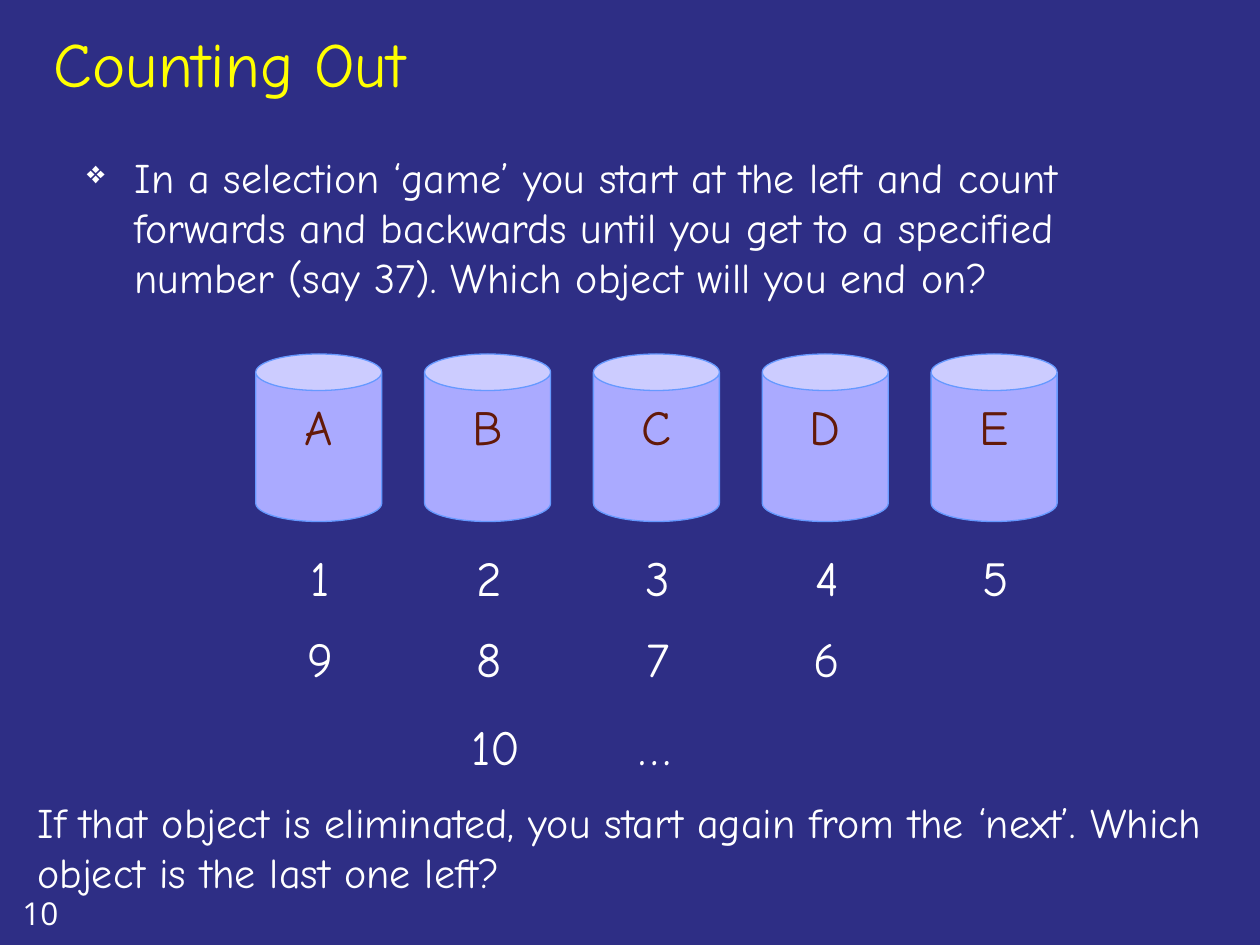
"""Build the Counting Out slide: five lettered cans with the counts below them."""
from typing import NamedTuple

from lxml import etree
from pptx import Presentation
from pptx import util as u
from pptx.dml import color
from pptx.enum import shapes, text
from pptx.oxml import ns

HAND = "Comic Neue"
WHITE = "FFFFFF"
COLUMN_STEP = 1.34
CAN_LEFT, CAN_TOP = 2.03, 2.81
COUNT_LEFT = 2.27


class Label(NamedTuple):
    words: str
    left: float
    top: float
    width: float
    height: float
    size: int = 28
    hue: str = WHITE
    font: str = HAND
    align: text.PP_ALIGN = text.PP_ALIGN.LEFT
    anchor: text.MSO_ANCHOR = text.MSO_ANCHOR.TOP


def rgb(value: str) -> color.RGBColor:
    return color.RGBColor.from_string(value)


def write(shape, label: Label):
    frame = shape.text_frame
    frame.word_wrap = True
    frame.vertical_anchor = label.anchor
    para = frame.paragraphs[0]
    para.text = label.words
    para.alignment = label.align
    para.font.size = u.Pt(label.size)
    para.font.name = label.font
    para.font.color.rgb = rgb(label.hue)
    return para


def edges(label: Label) -> list[u.Length]:
    return [u.Inches(n) for n in (label.left, label.top, label.width, label.height)]


def add_label(page, label: Label):
    return write(page.shapes.add_textbox(*edges(label)), label)


def add_can(page, label: Label) -> None:
    can = page.shapes.add_shape(shapes.MSO_SHAPE.CAN, *edges(label))
    can.adjustments[0] = 0.29
    can.shadow.inherit = False
    can.fill.solid()
    can.fill.fore_color.rgb = rgb("AAAAFF")
    can.line.color.rgb = rgb("6699FF")
    can.line.width = u.Pt(0.75)
    write(can, label)


def add_bullet(para, symbol: str) -> None:
    properties = para._p.get_or_add_pPr()
    properties.set("marL", str(u.Inches(0.38)))
    properties.set("indent", str(-u.Inches(0.38)))
    etree.SubElement(properties, ns.qn("a:buSzPct"), val="75000")
    etree.SubElement(properties, ns.qn("a:buChar"), char=symbol)


def main() -> None:
    deck = Presentation()
    deck.slide_width, deck.slide_height = u.Inches(10), u.Inches(7.5)
    page = deck.slides.add_slide(deck.slide_layouts[6])
    page.background.fill.solid()
    page.background.fill.fore_color.rgb = rgb("2E2E85")

    add_label(page, Label("10", 0.08, 7.05, 0.75, 0.4, 18, font="Open Sans"))
    add_label(page, Label("Counting Out", 0.33, 0.17, 8.5, 0.67, 36, "FFFF00",
                          anchor=text.MSO_ANCHOR.BOTTOM))
    rule = add_label(page, Label(
        "In a selection ‘game’ you start at the left and count forwards and backwards "
        "until you get to a specified number (say 37). Which object will you end on?",
        0.59, 1.15, 8.82, 1.97, 24))
    add_bullet(rule, "❖")

    center = text.PP_ALIGN.CENTER
    for column, letter in enumerate("ABCDE"):
        add_can(page, Label(letter, CAN_LEFT + column * COLUMN_STEP, CAN_TOP, 1, 1.33,
                            hue="631908", align=center))
    for top, counts in ((4.3, "12345"), (4.94, "9876")):
        for column, count in enumerate(counts):
            add_label(page, Label(count, COUNT_LEFT + column * COLUMN_STEP, top, 0.55, 0.57,
                                  align=center))
    for words, left in (("10", 3.5), ("…", 4.76)):
        add_label(page, Label(words, left, 5.64, 0.87, 0.57, align=center))

    add_label(page, Label(
        "If that object is eliminated, you start again from the ‘next’. "
        "Which object is the last one left?", 0.2, 6.27, 9.61, 0.91, 24))
    deck.save("out.pptx")


if __name__ == "__main__":
    main()
